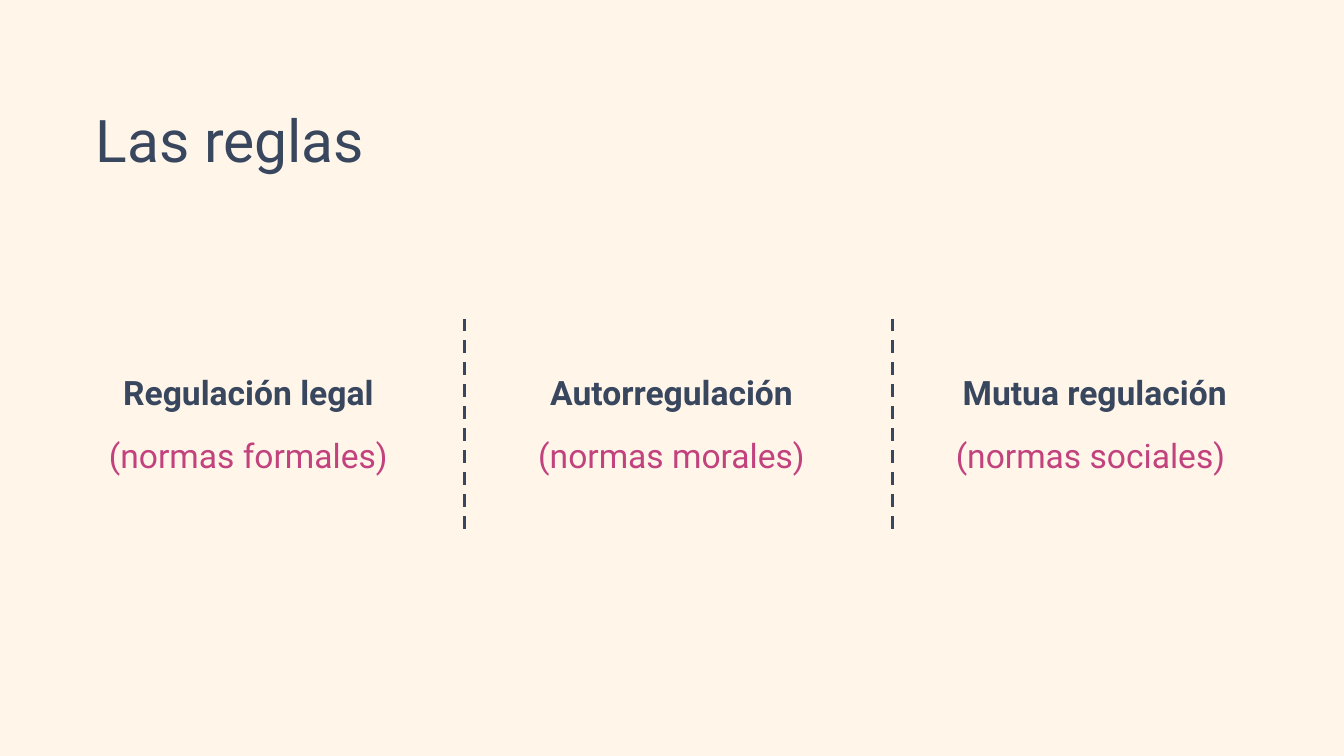
from dataclasses import dataclass

from lxml import etree
from pptx import Presentation
from pptx.dml.color import RGBColor
from pptx.enum import dml, shapes, text
from pptx.oxml import ns
from pptx.util import Inches, Pt


@dataclass(frozen=True)
class Theme:
    font: str = "Roboto"
    background: RGBColor = RGBColor(0xFF, 0xF5, 0xE9)
    ink: RGBColor = RGBColor(0x38, 0x46, 0x5E)
    accent: RGBColor = RGBColor(0xC2, 0x42, 0x7E)
    title_size: int = 42
    body_size: int = 24
    line_width: float = 2.25


THEME = Theme()

# Rule, norm and column width
RULES = [
    ("Regulación legal", "(normas formales)", 3.99),
    ("Autorregulación", "(normas morales)", 3.78),
    ("Mutua regulación", "(normas sociales) ", 3.99),
]


def write(para, words, *, size=THEME.body_size, color=THEME.ink, bold=False,
          align=text.PP_ALIGN.CENTER, before=0, spacing=1.0):
    para.alignment = align
    para.space_before = Pt(before)
    para.line_spacing = spacing
    span = para.add_run()
    span.text = words
    span.font.name = THEME.font
    span.font.size = Pt(size)
    span.font.bold = bold
    span.font.color.rgb = color


def set_margins(frame, side, end):
    frame.margin_left = frame.margin_right = Inches(side)
    frame.margin_top = frame.margin_bottom = Inches(end)


def add_title(page, words, left, top, width, height):
    title = page.shapes.title
    title.left, title.top = Inches(left), Inches(top)
    title.width, title.height = Inches(width), Inches(height)
    frame = title.text_frame
    frame.word_wrap = True
    frame.auto_size = text.MSO_AUTO_SIZE.NONE
    frame.vertical_anchor = text.MSO_ANCHOR.TOP
    set_margins(frame, 0.1, 0.05)
    write(frame.paragraphs[0], words, size=THEME.title_size,
          align=text.PP_ALIGN.LEFT, spacing=0.9)


def add_rule(page, rule, norm, left, top, width, height):
    box = page.shapes.add_textbox(
        Inches(left), Inches(top), Inches(width), Inches(height))
    frame = box.text_frame
    frame.word_wrap = True
    frame.auto_size = text.MSO_AUTO_SIZE.SHAPE_TO_FIT_TEXT
    set_margins(frame, 0.13, 0.07)
    write(frame.paragraphs[0], rule, bold=True)
    write(frame.add_paragraph(), norm, color=THEME.accent, before=16)


def add_divider(page, x, top, height):
    line = page.shapes.add_connector(
        shapes.MSO_CONNECTOR.STRAIGHT,
        Inches(x), Inches(top), Inches(x), Inches(top + height))
    line.line.color.rgb = THEME.ink
    line.line.width = Pt(THEME.line_width)
    line.line.dash_style = dml.MSO_LINE.DASH
    etree.SubElement(line._element.spPr, ns.qn("a:effectLst"))


def add_rules(page, left, top, width, height):
    # Three columns with evenly spaced centres
    pitch = (width - RULES[0][2]) / (len(RULES) - 1)
    first_centre = left + RULES[0][2] / 2
    for index, (rule, norm, column) in enumerate(RULES):
        centre = first_centre + index * pitch
        add_rule(page, rule, norm, centre - column / 2, top + 0.46, column, 1.17)
    # Dashed lines between the columns
    for index in range(len(RULES) - 1):
        add_divider(page, left + 4.14 + index * 4.25, top, height)


def main():
    deck = Presentation()
    deck.slide_width, deck.slide_height = Inches(13.34), Inches(7.5)
    page = deck.slides.add_slide(deck.slide_layouts.get_by_name("Title Only"))
    page.background.fill.solid()
    page.background.fill.fore_color.rgb = THEME.background
    add_title(page, "Las reglas", 0.85, 1.06, 5.23, 1.45)
    add_rules(page, 0.47, 3.16, 12.39, 2.11)
    deck.save("out.pptx")


if __name__ == "__main__":
    main()
